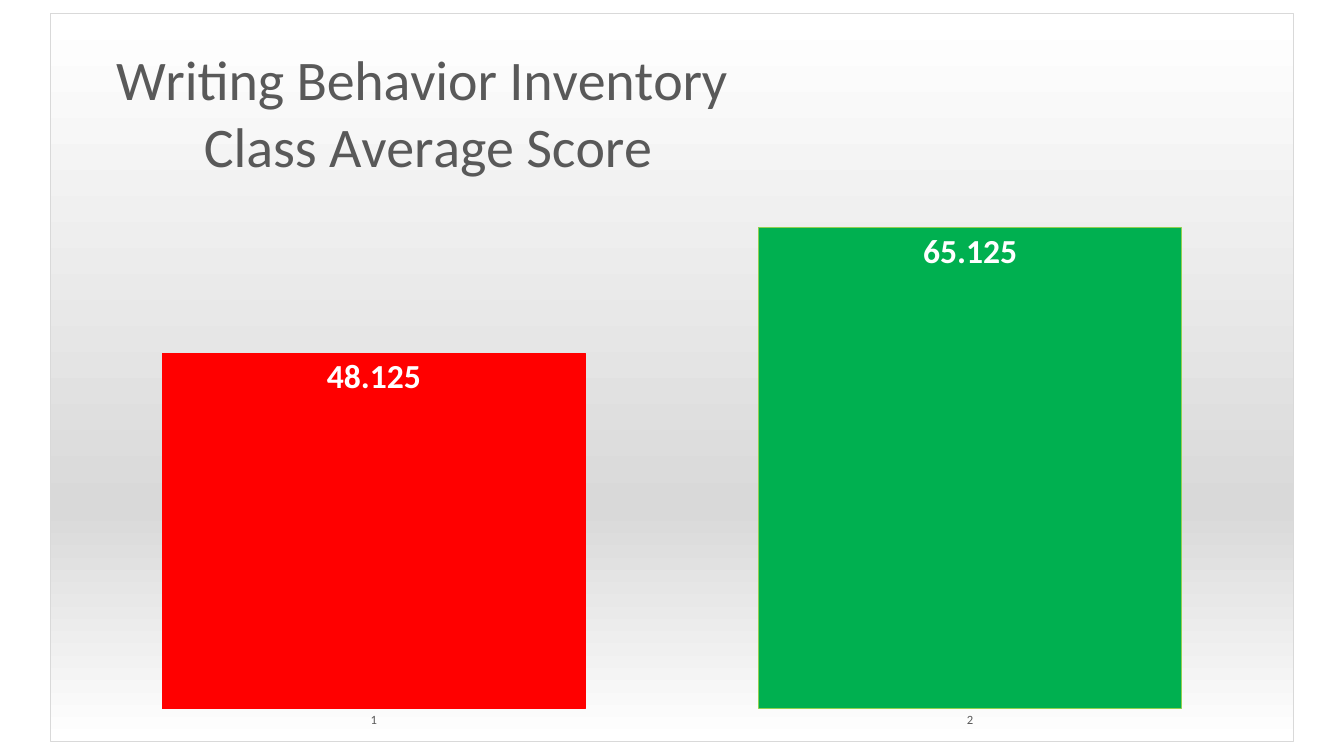
from lxml.etree import fromstring
from pptx import Presentation
from pptx.chart.data import CategoryChartData
from pptx.dml.color import RGBColor
from pptx.enum.chart import XL_CHART_TYPE, XL_LABEL_POSITION, XL_TICK_MARK
from pptx.enum.text import PP_ALIGN
from pptx.oxml.ns import nsdecls, qn
from pptx.util import Cm, Pt


def style_font(font, size, color, bold=False):
    font.name = "Calibri"
    font.size = Pt(size)
    font.bold = bold
    font.color.rgb = RGBColor.from_string(color)


def set_layout(parent, index, **places):
    for old in parent.findall(qn("c:layout")):
        parent.remove(old)
    tags = "".join(f'<c:{k} val="{v}"/>' for k, v in places.items())
    parent.insert(index, fromstring(
        f'<c:layout {nsdecls("c")}><c:manualLayout>{tags}</c:manualLayout></c:layout>'))


prs = Presentation()
prs.slide_width = Cm(33.87)
prs.slide_height = Cm(19.05)
s = prs.slides.add_slide(prs.slide_layouts[6])

data = CategoryChartData()
data.categories = ["1", "2"]
data.add_series("Series 1", [48.125, 65.125])
chart = s.shapes.add_chart(XL_CHART_TYPE.COLUMN_CLUSTERED, Cm(1.27), Cm(0.33),
                           Cm(31.33), Cm(18.37), data).chart
style_font(chart.font, 10, "000000")
chart.has_legend = False

chart.has_title = True
title = chart.chart_title
tf = title.text_frame
for i, line in enumerate(["Writing Behavior Inventory ", "Class Average Score"]):
    p = tf.add_paragraph() if i else tf.paragraphs[0]
    p.alignment = PP_ALIGN.CENTER
    r = p.add_run()
    r.text = line
    style_font(r.font, 40, "595959")
title.include_in_layout = False
set_layout(title.element, 1, xMode="edge", yMode="edge", x=0.05, y=0.04)
set_layout(chart.element.find(".//" + qn("c:plotArea")), 0, layoutTarget="inner",
           xMode="edge", yMode="edge", x=0.02, y=0.245, w=0.96, h=0.71)

cat = chart.category_axis
cat.major_tick_mark = XL_TICK_MARK.NONE
cat.format.line.fill.background()
style_font(cat.tick_labels.font, 9, "595959")
val = chart.value_axis
val.minimum_scale = 0
val.maximum_scale = 70
val.has_major_gridlines = False
val.visible = False

plot = chart.plots[0]
plot.gap_width = 41
plot.vary_by_categories = False
bars = plot.series[0]
for i, (fill, line) in enumerate([("FF0000", "FF0000"), ("00B050", "92D050")]):
    fmt = bars.points[i].format
    fmt.fill.solid()
    fmt.fill.fore_color.rgb = RGBColor.from_string(fill)
    fmt.line.color.rgb = RGBColor.from_string(line)
    fmt.line.width = Pt(0.75)

labels = bars.data_labels
labels.show_value = True
labels.position = XL_LABEL_POSITION.INSIDE_END
style_font(labels.font, 24, "FFFFFF", True)

stops = "".join(f'<a:gs pos="{pos}000"><a:srgbClr val="{color}"/></a:gs>'
                for pos, color in [(0, "FFFFFF"), (68, "D9D9D9"), (100, "FFFFFF")])
chart.element.find(qn("c:chart")).addnext(fromstring(
    f'<c:spPr {nsdecls("c", "a")}><a:gradFill><a:gsLst>{stops}</a:gsLst>'
    '<a:lin ang="5400000" scaled="0"/></a:gradFill><a:ln w="9525"><a:solidFill>'
    '<a:srgbClr val="D9D9D9"/></a:solidFill></a:ln></c:spPr>'))

prs.save("out.pptx")
